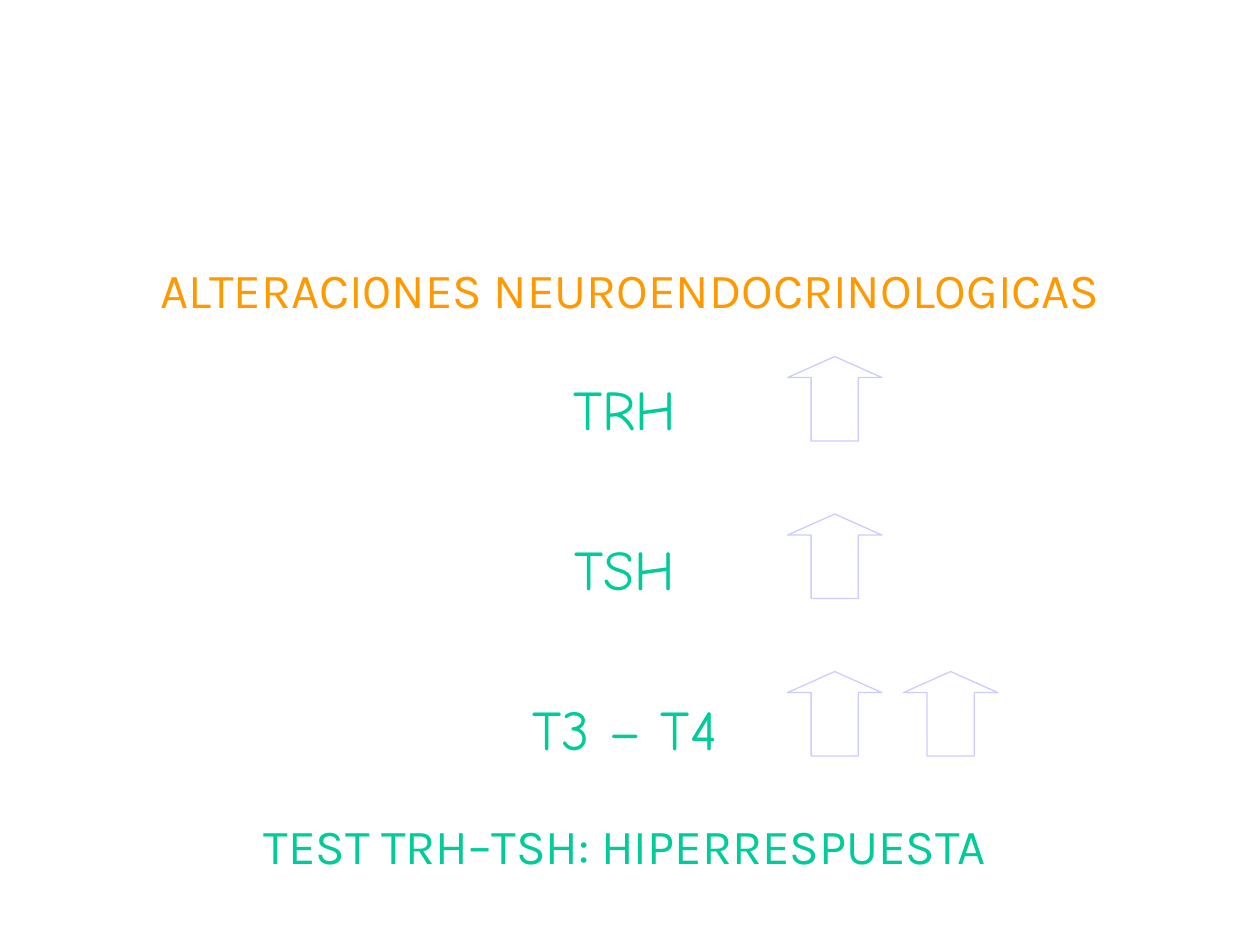
from pptx import Presentation
from pptx.dml.color import RGBColor
from pptx.enum.shapes import MSO_SHAPE
from pptx.enum.text import MSO_ANCHOR, MSO_AUTO_SIZE, PP_ALIGN
from pptx.util import Inches, Pt

TITLE = "ALTERACI0NES NEUROENDOCRINOLOGICAS"
# hormone, number of upward arrows
HORMONES = [("TRH", 1), ("TSH", 1), ("T3 – T4", 2)]
TEST = "TEST TRH–TSH: HIPERRESPUESTA"

THEME = {
    "title": ("Karla", 28, "FF9900"),
    "hormone": ("Comic Neue", 32, "00CC99"),
    "test": ("Karla", 28, "00CC99"),
    "arrow": "CCCCFF",
}
ROW_GAP, TEST_GAP = 53, 31  # points before a paragraph
ARROW_LEFT, ARROW_TOP = 6.25, 2.83
ARROW_W, ARROW_H = 0.75, 0.67
ARROW_STEP, ROW_STEP = 0.92, 1.25


def place(sp, box, anchor):
    sp.left, sp.top, sp.width, sp.height = map(Inches, box)
    tf = sp.text_frame
    tf.word_wrap = True
    tf.auto_size = MSO_AUTO_SIZE.NONE
    tf.vertical_anchor = anchor
    return tf


def write(p, text, style, gap=0):
    font, size, color = THEME[style]
    p.alignment = PP_ALIGN.CENTER
    p.space_before = Pt(gap)
    r = p.add_run()
    r.text = text
    r.font.name = font
    r.font.size = Pt(size)
    r.font.color.rgb = RGBColor.from_string(color)


def add_up_arrow(s, row, col):
    sp = s.shapes.add_shape(
        MSO_SHAPE.UP_ARROW,
        Inches(ARROW_LEFT + col * ARROW_STEP), Inches(ARROW_TOP + row * ROW_STEP),
        Inches(ARROW_W), Inches(ARROW_H))
    sp.adjustments[0] = 0.5
    sp.adjustments[1] = 0.25
    sp.shadow.inherit = False
    sp.fill.background()
    sp.line.color.rgb = RGBColor.from_string(THEME["arrow"])
    sp.line.width = Pt(0.75)


prs = Presentation()
prs.slide_width, prs.slide_height = Inches(10), Inches(7.5)
s = prs.slides.add_slide(prs.slide_layouts[0])

tf = place(s.shapes.title, (0.75, 1.67, 8.5, 1.25), MSO_ANCHOR.MIDDLE)
write(tf.paragraphs[0], TITLE, "title")

tf = place(s.placeholders[1], (1, 2.92, 7.92, 4.25), MSO_ANCHOR.TOP)
for row, (hormone, arrows) in enumerate(HORMONES):
    p = tf.add_paragraph() if row else tf.paragraphs[0]
    write(p, hormone, "hormone", ROW_GAP if row else 0)
    for col in range(arrows):
        add_up_arrow(s, row, col)
write(tf.add_paragraph(), TEST, "test", TEST_GAP)

prs.save("out.pptx")
